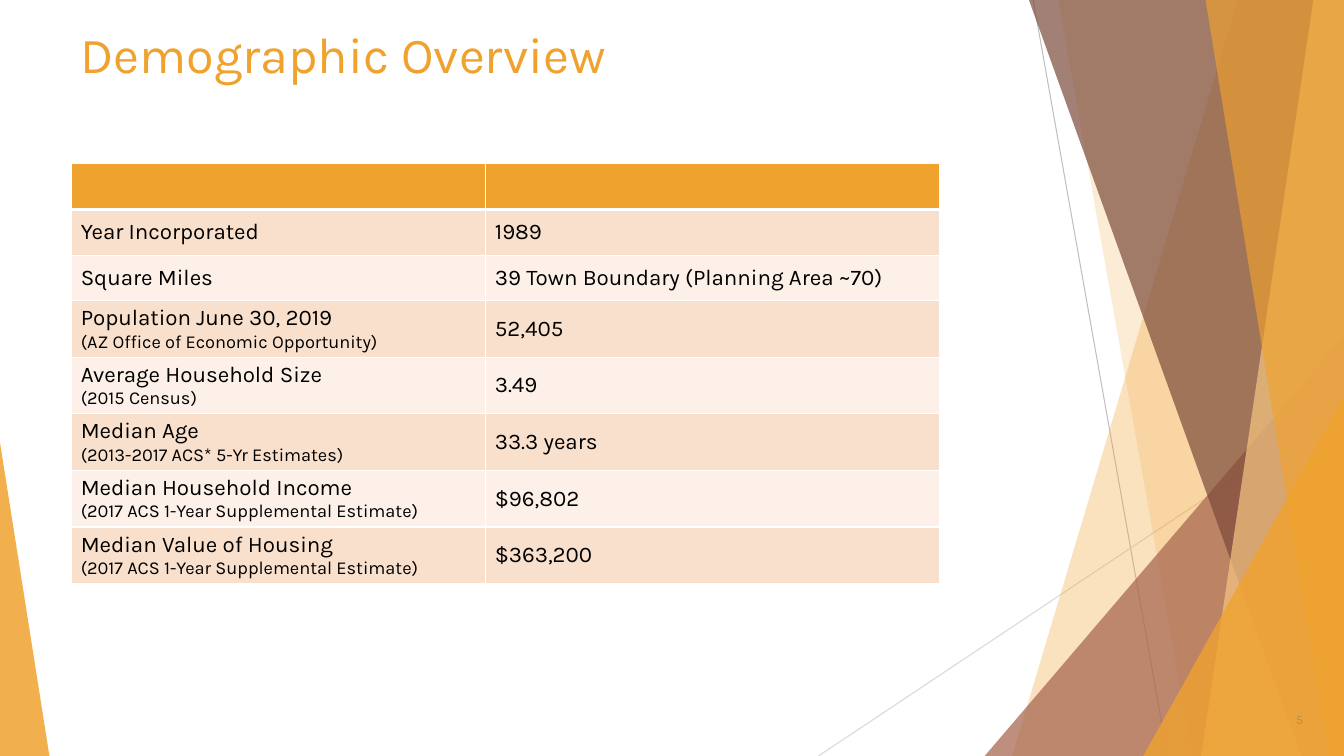
from dataclasses import dataclass

from lxml import etree
from pptx import Presentation
from pptx.dml.color import RGBColor
from pptx.enum.shapes import MSO_CONNECTOR, MSO_SHAPE
from pptx.enum.text import MSO_ANCHOR, PP_ALIGN
from pptx.oxml.ns import qn
from pptx.util import Pt

STRAIGHT = MSO_CONNECTOR.STRAIGHT
TRIANGLE = MSO_SHAPE.ISOSCELES_TRIANGLE
MIDDLE = MSO_ANCHOR.MIDDLE
TOP = MSO_ANCHOR.TOP
LEFT = PP_ALIGN.LEFT
RIGHT = PP_ALIGN.RIGHT


@dataclass(frozen=True)
class Theme:
    font: str = "Karla"
    orange: str = "F0A22E"
    light_orange: str = "F6C782"
    rust: str = "A5644E"
    brown: str = "7C4B3B"
    dark_line: str = "BFBFBF"
    light_line: str = "D9D9D9"
    white: str = "FFFFFF"
    black: str = "000000"
    page_number: str = "B58F58"
    bands: tuple = ("F9E0CD", "FCF0E8")
    title_size: float = 36
    body_size: float = 16
    source_size: float = 13
    number_size: float = 9


@dataclass(frozen=True)
class Box:
    left: float
    top: float
    width: float
    height: float

    @property
    def right(self):
        return self.left + self.width

    @property
    def bottom(self):
        return self.top + self.height


THEME = Theme()
SLIDE_BOX = Box(0, 0, 960, 540)
TITLE_BOX = Box(50.4, 13, 676.8, 103.7)
TABLE_BOX = Box(51.2, 117, 620, 299.8)
NUMBER_BOX = Box(880, 502, 58, 24)

FACTS = [
    ("Year Incorporated", "", "1989"),
    ("Square Miles", "", "39 Town Boundary (Planning Area ~70)"),
    ("Population June 30, 2019", "(AZ Office of Economic Opportunity)", "52,405"),
    ("Average Household Size", "(2015 Census)", "3.49"),
    ("Median Age", "(2013-2017 ACS* 5-Yr Estimates)", "33.3 years"),
    ("Median Household Income", "(2017 ACS 1-Year Supplemental Estimate)", "$96,802"),
    ("Median Value of Housing", "(2017 ACS 1-Year Supplemental Estimate)", "$363,200"),
]


def paint(shape, color, opacity):
    """Fill a shape with a translucent colour, without outline or shadow."""
    shape.shadow.inherit = False
    shape.line.fill.background()
    shape.fill.solid()
    shape.fill.fore_color.rgb = RGBColor.from_string(color)
    color_element = shape.fill._xPr.find(qn("a:solidFill"))[0]
    etree.SubElement(color_element, qn("a:alpha"), val=str(opacity * 1000))


def add_line(slide, start, end, color):
    line = slide.shapes.add_connector(STRAIGHT, *map(Pt, start + end))
    line.line.color.rgb = RGBColor.from_string(color)
    line.line.width = Pt(0.75)
    etree.SubElement(line._element.spPr, qn("a:effectLst"))


def add_blade(slide, box, top_x, bottom_x, color, opacity):
    """Draw a full-height panel from a slanted edge to the right of the box."""
    corners = [(top_x, box.top), (box.right, box.top),
               (box.right, box.bottom), (bottom_x, box.bottom)]
    corners = [(Pt(x), Pt(y)) for x, y in corners]
    builder = slide.shapes.build_freeform(*corners[0], scale=1.0)
    builder.add_line_segments(corners[1:], close=True)
    paint(builder.convert_to_shape(), color, opacity)


def add_corner(slide, box, apex, color, opacity):
    """Draw a right triangle whose apex is at the left (0) or right (1)."""
    triangle = slide.shapes.add_shape(
        TRIANGLE, Pt(box.left), Pt(box.top), Pt(box.width), Pt(box.height))
    triangle.adjustments[0] = apex
    paint(triangle, color, opacity)


def add_decoration(slide, box):
    def lower_right(width, height):
        return Box(box.right - width, box.bottom - height, width, height)

    add_line(slide, (box.right - 222, box.top), (box.right - 126, box.bottom), THEME.dark_line)
    add_line(slide, (box.right, box.top + 290), (box.right - 375.4, box.bottom), THEME.light_line)
    add_blade(slide, box, box.right - 75.8, box.right - 237, THEME.orange, 30)
    add_blade(slide, box, box.right - 204, box.right - 108.2, THEME.orange, 20)
    add_corner(slide, lower_right(256.6, 300.2), 1, THEME.rust, 72)
    add_blade(slide, box, box.right - 225, box.right - 30.5, THEME.brown, 70)
    add_blade(slide, box, box.right - 21.8, box.right - 102, THEME.light_orange, 70)
    add_blade(slide, box, box.right - 98.9, box.right - 11, THEME.orange, 65)
    add_corner(slide, lower_right(143.4, 257), 1, THEME.orange, 80)
    left_corner = Box(box.left, box.bottom - 223.9, 35.3, 223.9)
    add_corner(slide, left_corner, 0, THEME.orange, 85)


def add_run(paragraph, text, size, color):
    run = paragraph.add_run()
    run.text = text
    run.font.name = THEME.font
    run.font.size = Pt(size)
    run.font.bold = False
    run.font.color.rgb = RGBColor.from_string(color)


def add_label(slide, box, text, size, color, alignment, anchor):
    label = slide.shapes.add_textbox(Pt(box.left), Pt(box.top), Pt(box.width), Pt(box.height))
    frame = label.text_frame
    frame.word_wrap = True
    frame.vertical_anchor = anchor
    frame.paragraphs[0].alignment = alignment
    add_run(frame.paragraphs[0], text, size, color)


def style_cell(cell, fill, widths):
    """Set fill, margins and white borders (left, right, top, bottom)."""
    cell.fill.solid()
    cell.fill.fore_color.rgb = RGBColor.from_string(fill)
    cell.vertical_anchor = MIDDLE
    cell.margin_left = cell.margin_right = Pt(6.5)
    cell.margin_top = cell.margin_bottom = Pt(2.2)
    properties = cell._tc.get_or_add_tcPr()
    for index, (side, width) in enumerate(zip("LRTB", widths)):
        border = etree.Element(qn(f"a:ln{side}"), w=str(Pt(width)))
        solid = etree.SubElement(border, qn("a:solidFill"))
        etree.SubElement(solid, qn("a:srgbClr"), val=THEME.white)
        properties.insert(index, border)


def add_facts_table(slide, box):
    single_height, double_height = 32.6, 40.4
    label_width = 295.8
    table = slide.shapes.add_table(
        len(FACTS) + 1, 2, Pt(box.left), Pt(box.top), Pt(box.width), Pt(box.height)).table
    table.columns[0].width = Pt(label_width)
    table.columns[1].width = Pt(box.width - label_width)
    table.rows[0].height = Pt(single_height)
    for cell in table.rows[0].cells:
        style_cell(cell, THEME.orange, (1, 1, 1, 3))

    for index, (name, source, value) in enumerate(FACTS):
        row = table.rows[index + 1]
        row.height = Pt(double_height if source else single_height)
        top_width = 3 if index == 0 else 1
        for cell, text in zip(row.cells, (name, value)):
            style_cell(cell, THEME.bands[index % 2], (1, 1, top_width, 1))
            add_run(cell.text_frame.paragraphs[0], text, THEME.body_size, THEME.black)
        if source:
            paragraph = row.cells[0].text_frame.add_paragraph()
            add_run(paragraph, source, THEME.source_size, THEME.black)


def main():
    presentation = Presentation()
    presentation.slide_width = Pt(SLIDE_BOX.width)
    presentation.slide_height = Pt(SLIDE_BOX.height)
    slide = presentation.slides.add_slide(presentation.slide_layouts[6])
    add_decoration(slide, SLIDE_BOX)
    add_facts_table(slide, TABLE_BOX)
    add_label(slide, TITLE_BOX, "Demographic Overview", THEME.title_size, THEME.orange, LEFT, TOP)
    add_label(slide, NUMBER_BOX, "5", THEME.number_size, THEME.page_number, RIGHT, MIDDLE)
    presentation.save("out.pptx")


if __name__ == "__main__":
    main()
